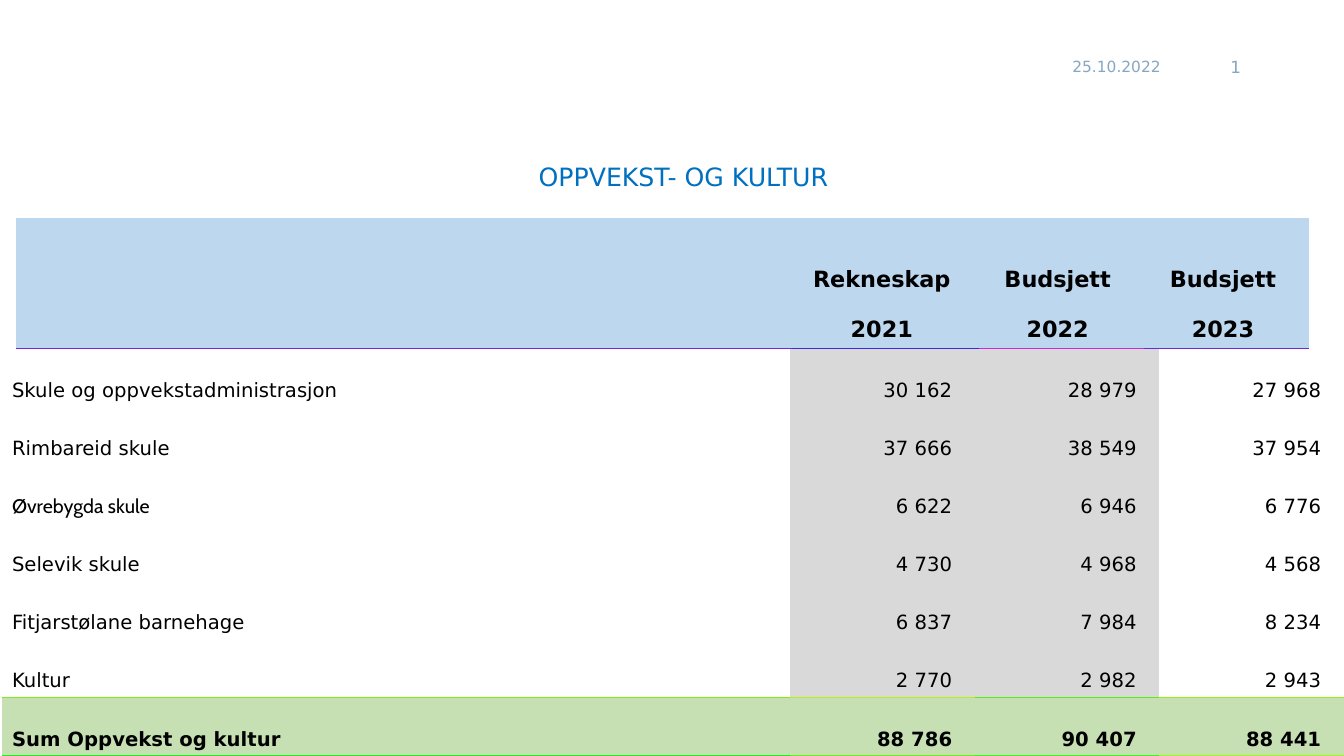
from lxml.etree import SubElement
from pptx import Presentation
from pptx.dml.color import RGBColor
from pptx.enum.text import MSO_ANCHOR, MSO_AUTO_SIZE, PP_ALIGN
from pptx.oxml import parse_xml
from pptx.oxml.ns import nsdecls, qn
from pptx.util import Pt

COLORS = {"text": "000000", "title": "0070C0", "meta": "86A7C2",
          "header": "BDD7EE", "past": "D9D9D9", "total": "C6E0B4"}
HEADER_LINES = ["7824DC", "4026DC", "C82BDC", "682BDC"]
TOTAL_TOP = ["80EC16", "B8ED16", "58ED16", "98EF16"]
TOTAL_BOTTOM = ["18F116", "68EF16", "38F516", "98FB16"]
NO_GRID = "{2D5ABB26-0587-4C30-8999-92F81FD0307C}"
LEFT, CENTER, RIGHT = PP_ALIGN.LEFT, PP_ALIGN.CENTER, PP_ALIGN.RIGHT

header = [["", "Rekneskap", "Budsjett", "Budsjett"],
          ["", "2021", "2022", "2023"]]
body = [["Skule og oppvekstadministrasjon", "30 162", "28 979", "27 968"],
        ["Rimbareid skule", "37 666", "38 549", "37 954"],
        ["Øvrebygda skule", "6 622", "6 946", "6 776"],
        ["Selevik skule", "4 730", "4 968", "4 568"],
        ["Fitjarstølane barnehage", "6 837", "7 984", "8 234"],
        ["Kultur", "2 770", "2 982", "2 943"],
        ["Sum Oppvekst og kultur", "88 786", "90 407", "88 441"]]


def write(tf, text, size, color, align, bold=False, font="DejaVu Sans"):
    p = tf.paragraphs[0]
    p.alignment = align
    r = p.add_run()
    r.text = text
    for name, value in {"size": Pt(size), "bold": bold, "name": font}.items():
        setattr(r.font, name, value)
    r.font.color.rgb = RGBColor.from_string(COLORS[color])


def set_borders(cell, lines):
    """Draw thin lines; lines maps lnT and lnB, in that order, to a colour."""
    for i, (tag, color) in enumerate(lines.items()):
        ln = parse_xml(f'<a:{tag} {nsdecls("a")} w="9525"/>')
        fill = SubElement(ln, qn("a:solidFill"))
        SubElement(fill, qn("a:srgbClr")).set("val", color)
        cell._tc.get_or_add_tcPr().insert(i, ln)


prs = Presentation()
prs.slide_width, prs.slide_height = Pt(960), Pt(540)
s = prs.slides.add_slide(prs.slide_layouts[5])

# Date and page number
for text, left, width, size, align in [("25.10.2022", 758.9, 82.8, 11, LEFT),
                                       ("1", 852.5, 41, 12, RIGHT)]:
    tf = s.shapes.add_textbox(Pt(left), Pt(33.1), Pt(width), Pt(28.8)).text_frame
    tf.word_wrap = True
    tf.vertical_anchor = MSO_ANCHOR.MIDDLE
    write(tf, text, size, "meta", align)

# Title
title = s.shapes.title
for name, value in {"left": 171.4, "top": 111.6, "width": 633.6, "height": 28.8}.items():
    setattr(title, name, Pt(value))
tf = title.text_frame
tf.vertical_anchor = MSO_ANCHOR.TOP
tf.auto_size = MSO_AUTO_SIZE.SHAPE_TO_FIT_TEXT
write(tf, "OPPVEKST- OG KULTUR", 18, "title", CENTER)

# Heading table and figures table
tables = [
    {"rows": header, "left": 11.5, "top": 155.7, "widths": [554.4, 133.2, 118.1, 118.1],
     "heights": [56.9, 36], "size": 16, "align": CENTER, "margin": 12.5},
    {"rows": body, "left": 1.4, "top": 249, "widths": [563, 131.8, 131.8, 131.8],
     "heights": [41.57] * 7, "size": 14, "align": RIGHT, "margin": 16},
]
for t in tables:
    rows, widths, heights = t["rows"], t["widths"], t["heights"]
    tbl = s.shapes.add_table(len(rows), 4, Pt(t["left"]), Pt(t["top"]),
                             Pt(sum(widths)), Pt(sum(heights))).table
    tbl.first_row = tbl.horz_banding = False
    tbl._tbl.tblPr.find(qn("a:tableStyleId")).text = NO_GRID
    for col, width in zip(tbl.columns, widths):
        col.width = Pt(width)
    for i, row in enumerate(rows):
        tbl.rows[i].height = Pt(heights[i])
        is_header, is_total = rows is header, row is body[-1]
        for j, text in enumerate(row):
            cell = tbl.cell(i, j)
            cell.vertical_anchor = MSO_ANCHOR.BOTTOM
            if j:
                cell.margin_right = Pt(t["margin"])
            if text:
                write(cell.text_frame, text, t["size"], "text", t["align"] if j else LEFT,
                      is_header or is_total,
                      "Cabin" if text == "Øvrebygda skule" else "DejaVu Sans")
            shade = ("header" if is_header else "total" if is_total
                     else "past" if j in (1, 2) else None)
            if shade:
                cell.fill.solid()
                cell.fill.fore_color.rgb = RGBColor.from_string(COLORS[shade])
            else:
                cell.fill.background()
            if row is header[-1]:
                set_borders(cell, {"lnB": HEADER_LINES[j]})
            elif row is body[-2]:
                set_borders(cell, {"lnB": TOTAL_TOP[j]})
            elif is_total:
                set_borders(cell, {"lnT": TOTAL_TOP[j], "lnB": TOTAL_BOTTOM[j]})

prs.save("out.pptx")
